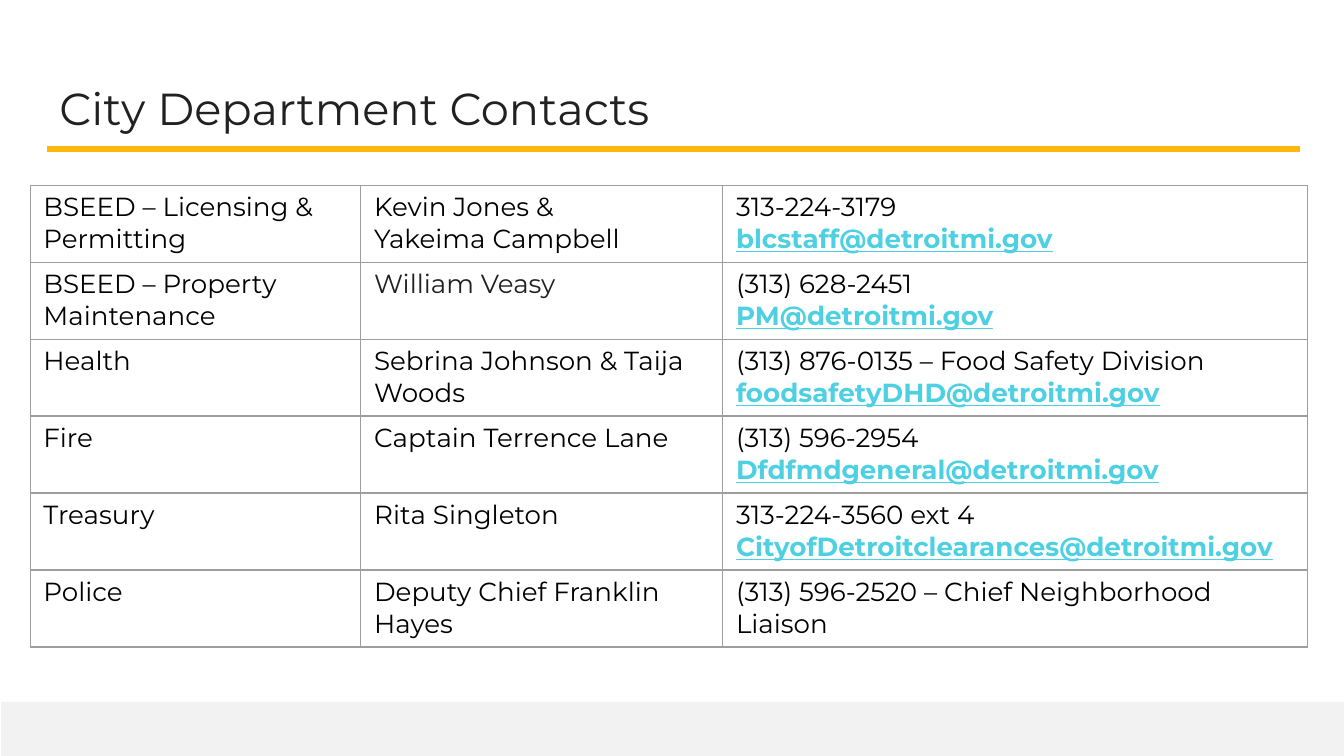
from lxml import etree
from pptx import Presentation
from pptx.dml.color import RGBColor
from pptx.enum import shapes, text
from pptx.oxml import ns
from pptx.util import Cm, Pt

FONT = "Montserrat"
BLACK, CHARCOAL, CYAN = "000000", "212121", "4DD0E1"
AMBER, PALE_GREY, BORDER_GREY = "FEB70D", "F2F2F2", "9E9E9E"


def color(hex_string):
    return RGBColor.from_string(hex_string)


def add_borders(cell, hex_string, width):
    properties = cell._tc.get_or_add_tcPr()
    for position, side in enumerate(("lnL", "lnR", "lnT", "lnB")):
        line = etree.Element(ns.qn(f"a:{side}"), w=str(width))
        fill = etree.SubElement(line, ns.qn("a:solidFill"))
        etree.SubElement(fill, ns.qn("a:srgbClr"), val=hex_string)
        properties.insert(position, line)


contacts = [
    ("BSEED – Licensing & Permitting", "Kevin Jones &\nYakeima Campbell",
     "313-224-3179\nblcstaff@detroitmi.gov"),
    ("BSEED – Property Maintenance", "William Veasy",
     "(313) 628-2451\nPM@detroitmi.gov"),
    ("Health", "Sebrina Johnson & Taija Woods",
     "(313) 876-0135 – Food Safety Division\nfoodsafetyDHD@detroitmi.gov"),
    ("Fire", "Captain Terrence Lane",
     "(313) 596-2954\nDfdfmdgeneral@detroitmi.gov"),
    ("Treasury", "Rita Singleton",
     "313-224-3560 ext 4\nCityofDetroitclearances@detroitmi.gov"),
    ("Police", "Deputy Chief Franklin Hayes",
     "(313) 596-2520 – Chief Neighborhood Liaison"),
]

prs = Presentation()
prs.slide_width, prs.slide_height = Cm(25.4), Cm(14.29)
slide = prs.slides.add_slide(prs.slide_layouts[5])

# Footer band and the rule under the title
footer = slide.shapes.add_shape(
    shapes.MSO_SHAPE.RECTANGLE, Cm(0.02), Cm(13.27), Cm(25.38), Cm(1.02))
footer.shadow.inherit = False
footer.fill.solid()
footer.fill.fore_color.rgb = color(PALE_GREY)
footer.line.fill.background()

rule = slide.shapes.add_connector(
    shapes.MSO_CONNECTOR.STRAIGHT, Cm(0.89), Cm(2.82), Cm(24.56), Cm(2.82))
rule.line.color.rgb = color(AMBER)
rule.line.width = Pt(3)
etree.SubElement(rule._element.spPr, ns.qn("a:effectLst"))

# Title
title = slide.shapes.title
title.left, title.top, title.width, title.height = (
    Cm(0.87), Cm(1.24), Cm(23.67), Cm(1.6))
heading = title.text_frame
heading.text = "City Department Contacts"
heading.auto_size = text.MSO_AUTO_SIZE.NONE
heading.vertical_anchor = text.MSO_ANCHOR.MIDDLE
heading.margin_left = heading.margin_right = Cm(0.25)
heading.margin_top = heading.margin_bottom = Cm(0.25)
heading.paragraphs[0].alignment = text.PP_ALIGN.LEFT
heading_font = heading.paragraphs[0].runs[0].font
heading_font.name, heading_font.size = FONT, Pt(24)
heading_font.color.rgb = color(CHARCOAL)

# Contacts: department, people, phone and e-mail
column_widths = [Cm(6.25), Cm(6.84), Cm(11.05)]
row_height = Cm(1.455)
directory = slide.shapes.add_table(
    len(contacts), len(column_widths), Cm(0.57), Cm(3.5),
    sum(column_widths), row_height * len(contacts)).table
directory.first_row = directory.horz_banding = False
for column, width in zip(directory.columns, column_widths):
    column.width = width

for row, contact in enumerate(contacts):
    directory.rows[row].height = row_height
    for column, entry in enumerate(contact):
        cell = directory.cell(row, column)
        cell.text_frame.text = entry
        cell.fill.background()
        cell.margin_left = cell.margin_right = Cm(0.25)
        cell.margin_top = cell.margin_bottom = Cm(0.12)
        add_borders(cell, BORDER_GREY, Pt(0.75))
        for paragraph in cell.text_frame.paragraphs:
            is_email = "@" in paragraph.text
            font = paragraph.runs[0].font
            font.name, font.size = FONT, Pt(14)
            font.bold = font.underline = is_email
            font.color.rgb = color(CYAN if is_email else BLACK)

veasy = directory.cell(1, 1).text_frame.paragraphs[0].runs[0]
veasy.font.color.rgb = color(CHARCOAL)

prs.save("out.pptx")
